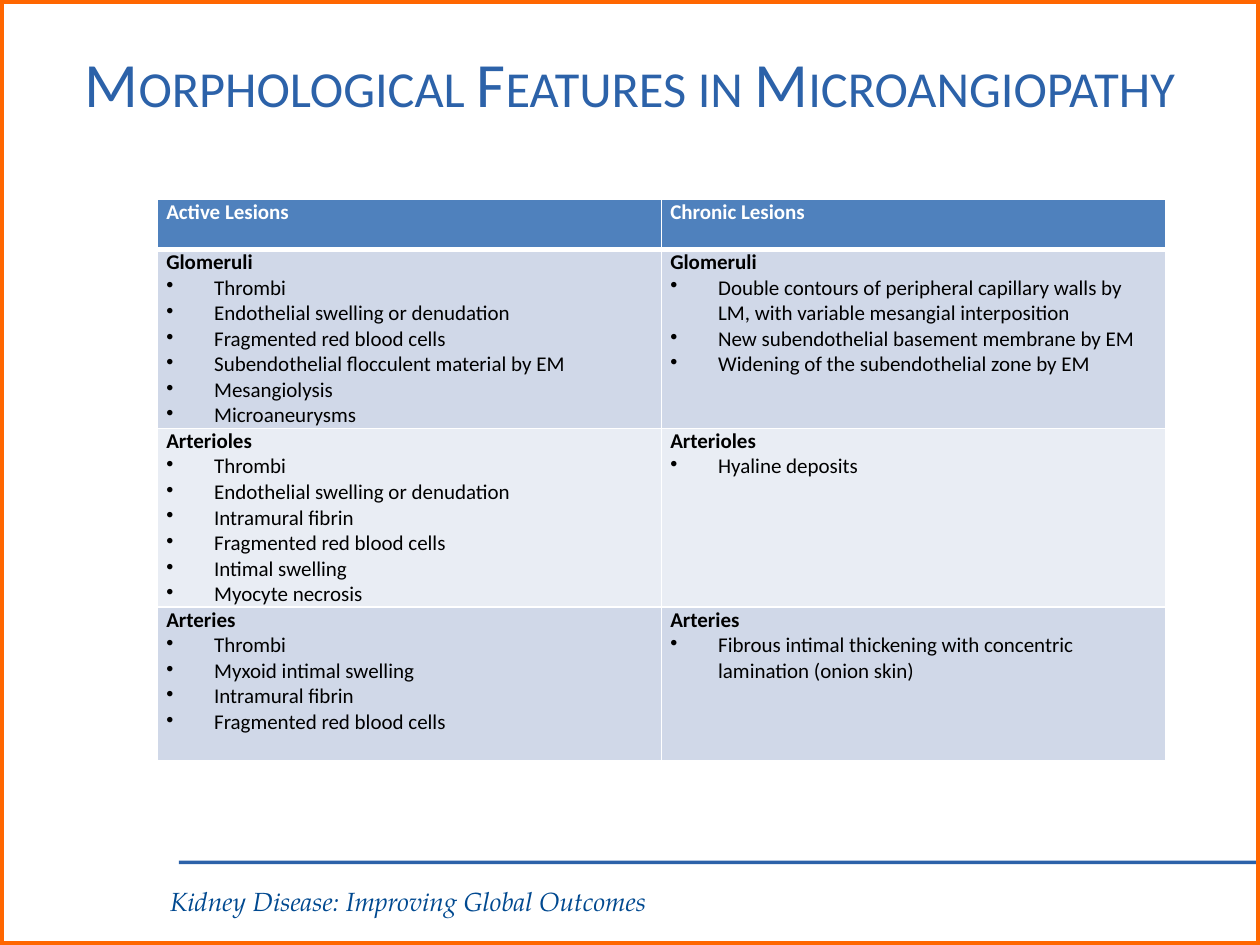
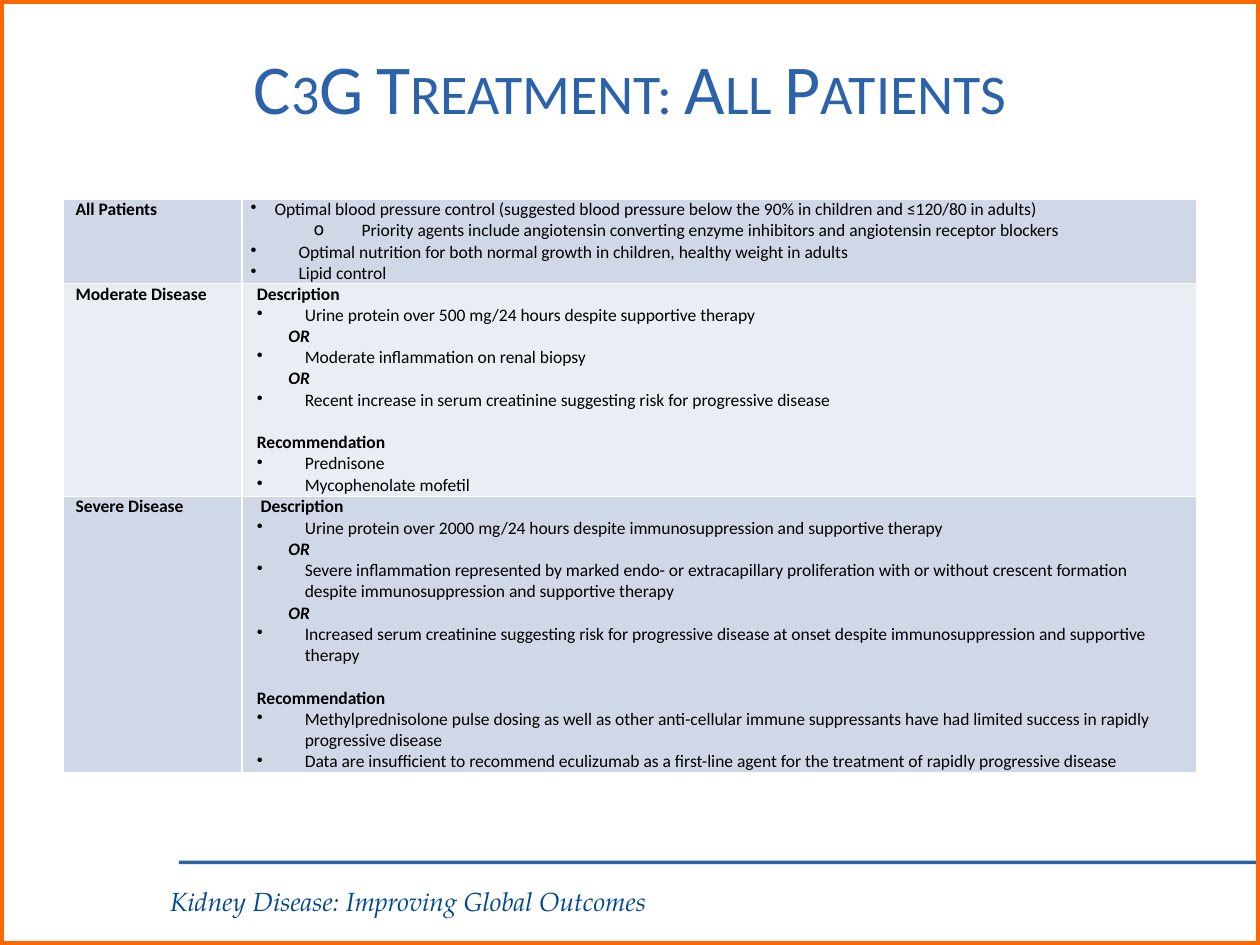
from dataclasses import dataclass

from lxml import etree
from pptx import Presentation
from pptx.dml.color import RGBColor
from pptx.enum.shapes import MSO_SHAPE
from pptx.enum.text import MSO_ANCHOR, MSO_AUTO_SIZE, PP_ALIGN
from pptx.oxml.ns import qn
from pptx.presentation import Presentation as Deck
from pptx.slide import Slide
from pptx.table import _Cell
from pptx.text.text import _Paragraph
from pptx.util import Inches, Pt

RECTANGLE = MSO_SHAPE.RECTANGLE
TOP = MSO_ANCHOR.TOP
CENTER = PP_ALIGN.CENTER
NO_AUTOFIT = MSO_AUTO_SIZE.NONE
TITLE_ONLY = 5


@dataclass(frozen=True)
class Theme:
    body_font: str = "Calibri"
    footer_font: str = "TeX Gyre Pagella"
    footer_size: float = 15
    frame_width: float = 4.5
    blue: str = "2C62A9"
    footer_blue: str = "004990"
    orange: str = "FF6600"
    white: str = "FFFFFF"
    black: str = "000000"
    header: str = "4F81BD"
    dark_band: str = "D0D8E8"
    light_band: str = "E9EDF4"
    border: float = 1
    header_border: float = 3


THEME = Theme()


@dataclass(frozen=True)
class Style:
    left: float = 0
    hanging: float = 0
    bullet: str = ""
    bold: bool = False
    italic: bool = False
    lines_before: float = 0


HEADING = Style(bold=True)
NUDGED_HEADING = Style(left=0.03, bold=True)
LATER_HEADING = Style(bold=True, lines_before=1)
ITEM = Style(0.38, 0.38, "•")
TIGHT_ITEM = Style(0.19, 0.19, "•")
SUB_ITEM = Style(0.88, 0.38, "o")
ALTERNATIVE = Style(left=0.25, bold=True, italic=True)


@dataclass(frozen=True)
class Line:
    text: str
    style: Style = ITEM


@dataclass(frozen=True)
class CellText:
    lines: list[Line]
    margin: float = 0.07


@dataclass(frozen=True)
class Row:
    height: float
    fill: str
    cells: list[CellText]
    color: str = THEME.black
    top_border: float = THEME.border
    bottom_border: float = THEME.border


@dataclass(frozen=True)
class TableSlide:
    title: str
    title_size: float
    left: float
    columns: list[float]
    text_size: float
    rows: list[Row]
    has_header: bool = False


def items(*texts: str) -> list[Line]:
    return [Line(text) for text in texts]


def group(heading: str, *texts: str) -> CellText:
    return CellText([Line(heading, HEADING), *items(*texts)])


def label(text: str) -> CellText:
    return CellText([Line(text, HEADING)], margin=0.1)


def disease(heading: Style, criteria: list[str], advice: list[str]) -> CellText:
    lines = [Line("Description", heading), Line(criteria[0])]
    for criterion in criteria[1:]:
        lines += [Line("OR", ALTERNATIVE), Line(criterion)]
    lines += [Line("Recommendation", LATER_HEADING), *items(*advice)]
    return CellText(lines, margin=0.12)


MORPHOLOGY = TableSlide(
    "Morphological Features in Microangiopathy", 36, 1.25, [4, 4], 12,
    [
        Row(0.4, THEME.header, [group("Active Lesions"), group("Chronic Lesions")],
            color=THEME.white, bottom_border=THEME.header_border),
        Row(1.42, THEME.dark_band, [
            group("Glomeruli", "Thrombi", "Endothelial swelling or denudation",
                  "Fragmented red blood cells",
                  "Subendothelial flocculent material by EM",
                  "Mesangiolysis", "Microaneurysms"),
            group("Glomeruli",
                  "Double contours of peripheral capillary walls by LM, "
                  "with variable mesangial interposition",
                  "New subendothelial basement membrane by EM",
                  "Widening of the subendothelial zone by EM"),
        ], top_border=THEME.header_border),
        Row(1.42, THEME.light_band, [
            group("Arterioles", "Thrombi", "Endothelial swelling or denudation",
                  "Intramural fibrin", "Fragmented red blood cells",
                  "Intimal swelling", "Myocyte necrosis"),
            group("Arterioles", "Hyaline deposits"),
        ]),
        Row(1.22, THEME.dark_band, [
            group("Arteries", "Thrombi", "Myxoid intimal swelling",
                  "Intramural fibrin", "Fragmented red blood cells"),
            group("Arteries", "Fibrous intimal thickening with concentric "
                  "lamination (onion skin)"),
        ]),
    ],
    has_header=True,
)

TREATMENT = TableSlide(
    "C3G Treatment: All Patients", 40, 0.5, [1.42, 7.58], 10,
    [
        Row(0.67, THEME.dark_band, [
            label("All Patients"),
            CellText([
                Line("Optimal blood pressure control (suggested blood pressure "
                     "below the 90% in children and ≤120/80 in adults)", TIGHT_ITEM),
                Line("Priority agents include angiotensin converting enzyme "
                     "inhibitors and angiotensin receptor blockers", SUB_ITEM),
                *items("Optimal nutrition for both normal growth in children, "
                       "healthy weight in adults", "Lipid control"),
            ]),
        ]),
        Row(1.69, THEME.light_band, [
            label("Moderate Disease"),
            disease(HEADING, [
                "Urine protein over 500 mg/24 hours despite supportive therapy",
                "Moderate inflammation on renal biopsy",
                "Recent increase in serum creatinine suggesting risk for "
                "progressive disease",
            ], ["Prednisone", "Mycophenolate mofetil"]),
        ]),
        Row(2.19, THEME.dark_band, [
            label("Severe Disease"),
            disease(NUDGED_HEADING, [
                "Urine protein over 2000 mg/24 hours despite immunosuppression "
                "and supportive therapy",
                "Severe inflammation represented by marked endo- or extracapillary "
                "proliferation with or without crescent formation despite "
                "immunosuppression and supportive therapy",
                "Increased serum creatinine suggesting risk for progressive disease "
                "at onset despite immunosuppression and supportive therapy",
            ], [
                "Methylprednisolone pulse dosing as well as other anti-cellular "
                "immune suppressants have had limited success in rapidly "
                "progressive disease",
                "Data are insufficient to recommend eculizumab as a first-line agent "
                "for the treatment of rapidly progressive disease",
            ]),
        ]),
    ],
)


def rgb(color: str) -> RGBColor:
    return RGBColor.from_string(color)


def add_text(paragraph: _Paragraph, text: str, font: str, size: float, color: str,
             bold: bool = False, italic: bool = False, small_caps: bool = False) -> None:
    run = paragraph.add_run()
    run.text = text
    run.font.name = font
    run.font.size = Pt(size)
    run.font.color.rgb = rgb(color)
    run.font.bold = bold
    run.font.italic = italic
    if small_caps:
        run._r.get_or_add_rPr().set("cap", "small")


def add_title(slide: Slide, text: str, size: float) -> None:
    title = slide.shapes.title
    title.left, title.top = Inches(0.5), Inches(0.3)
    title.width, title.height = Inches(9), Inches(1.25)
    frame = title.text_frame
    frame.auto_size = NO_AUTOFIT
    frame.vertical_anchor = TOP
    frame.paragraphs[0].alignment = CENTER
    add_text(frame.paragraphs[0], text, THEME.body_font, size, THEME.blue,
             small_caps=True)


def add_footer_and_frame(slide: Slide) -> None:
    footer = slide.shapes.add_textbox(
        Inches(1.25), Inches(6.98), Inches(7.75), Inches(0.35))
    footer.text_frame.word_wrap = True
    add_text(footer.text_frame.paragraphs[0],
             "Kidney Disease: Improving Global Outcomes",
             THEME.footer_font, THEME.footer_size, THEME.footer_blue, italic=True)

    rule = slide.shapes.add_shape(
        RECTANGLE, Inches(1.42), Inches(6.83), Inches(8.58), Inches(0.03))
    rule.shadow.inherit = False
    rule.fill.solid()
    rule.fill.fore_color.rgb = rgb(THEME.blue)
    rule.line.fill.background()

    frame = slide.shapes.add_shape(RECTANGLE, 0, 0, Inches(10), Inches(7.5))
    frame.shadow.inherit = False
    frame.fill.background()
    frame.line.color.rgb = rgb(THEME.orange)
    frame.line.width = Pt(THEME.frame_width)


def add_borders(cell: _Cell, row: Row) -> None:
    properties = cell._tc.get_or_add_tcPr()
    widths = {"lnL": THEME.border, "lnR": THEME.border,
              "lnT": row.top_border, "lnB": row.bottom_border}
    for position, (side, width) in enumerate(widths.items()):
        border = etree.Element(qn(f"a:{side}"), w=str(Pt(width)))
        fill = etree.SubElement(border, qn("a:solidFill"))
        etree.SubElement(fill, qn("a:srgbClr"), val=THEME.white)
        properties.insert(position, border)


def format_paragraph(paragraph: _Paragraph, style: Style, size: float) -> None:
    properties = paragraph._p.get_or_add_pPr()
    properties.set("marL", str(Inches(style.left)))
    properties.set("indent", str(-Inches(style.hanging)))
    if style.bullet:
        etree.SubElement(properties, qn("a:buChar"), char=style.bullet)
    if style.lines_before:
        paragraph.space_before = Pt(style.lines_before * size * 1.22)


def fill_cell(cell: _Cell, content: CellText, row: Row, size: float) -> None:
    cell.margin_left = cell.margin_right = Inches(content.margin)
    cell.margin_top = cell.margin_bottom = 0
    cell.vertical_anchor = TOP
    cell.fill.solid()
    cell.fill.fore_color.rgb = rgb(row.fill)
    add_borders(cell, row)
    frame = cell.text_frame
    for index, line in enumerate(content.lines):
        paragraph = frame.add_paragraph() if index else frame.paragraphs[0]
        format_paragraph(paragraph, line.style, size)
        add_text(paragraph, line.text, THEME.body_font, size, row.color,
                 line.style.bold, line.style.italic)


def add_lesion_or_care_table(slide: Slide, content: TableSlide) -> None:
    table = slide.shapes.add_table(
        len(content.rows), len(content.columns), Inches(content.left), Inches(1.58),
        Inches(sum(content.columns)),
        Inches(sum(row.height for row in content.rows))).table
    table.first_row = content.has_header
    for column, width in zip(table.columns, content.columns):
        column.width = Inches(width)
    for table_row, row in zip(table.rows, content.rows):
        table_row.height = Inches(row.height)
        for cell, cell_text in zip(table_row.cells, row.cells):
            fill_cell(cell, cell_text, row, content.text_size)


def add_table_slide(deck: Deck, content: TableSlide) -> None:
    slide = deck.slides.add_slide(deck.slide_layouts[TITLE_ONLY])
    add_footer_and_frame(slide)
    add_title(slide, content.title, content.title_size)
    add_lesion_or_care_table(slide, content)


def main() -> None:
    deck = Presentation()
    deck.slide_width, deck.slide_height = Inches(10), Inches(7.5)
    for content in (MORPHOLOGY, TREATMENT):
        add_table_slide(deck, content)
    deck.save("out.pptx")


if __name__ == "__main__":
    main()
